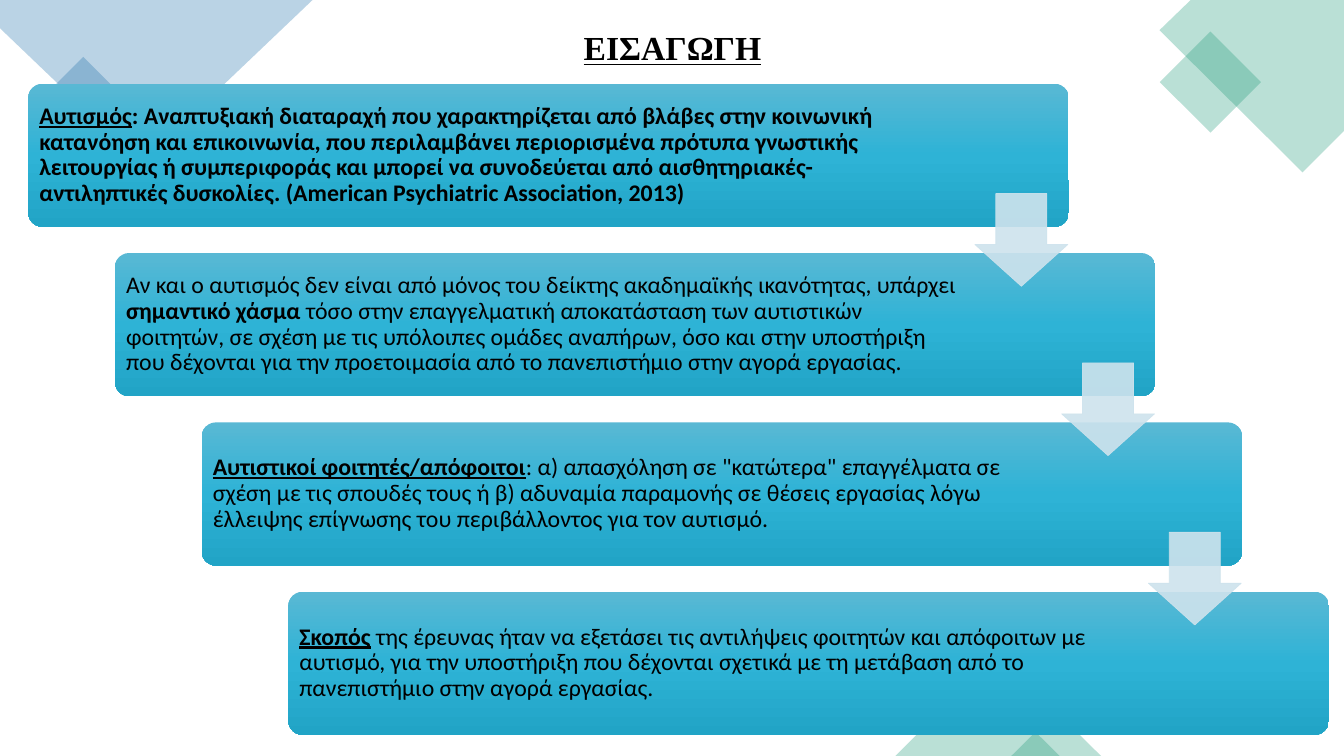
from lxml import etree
from pptx import Presentation
from pptx.dml.color import RGBColor
from pptx.enum import shapes, text
from pptx.oxml import ns, parse_xml
from pptx.util import Inches, Pt

HUES = {
    "blue": "1D6FA9", "green": "1D9A78", "arrow": "CEE3ED", "ink": "000000",
    "top": "59B8D4", "mid": "2EB3D6", "low": "21A4C6",
}
KIND = shapes.MSO_SHAPE
STEP_X, STEP_Y = 0.86, 1.68

STEPS = [
    (8.67, [
        ("Αυτισμός", "bu"),
        (": Αναπτυξιακή διαταραχή που χαρακτηρίζεται από βλάβες στην "
         "κοινωνική κατανόηση και επικοινωνία, που περιλαμβάνει περιορισμένα "
         "πρότυπα γνωστικής λειτουργίας ή συμπεριφοράς και μπορεί να "
         "συνοδεύεται από αισθητηριακές-αντιληπτικές δυσκολίες. "
         "(American Psychiatric Association, 2013)", "b"),
    ]),
    (8.45, [
        ("Αν και ο αυτισμός δεν είναι από μόνος του δείκτης ακαδημαϊκής "
         "ικανότητας, υπάρχει ", ""),
        ("σημαντικό χάσμα", "b"),
        (" τόσο στην επαγγελματική αποκατάσταση των αυτιστικών φοιτητών, "
         "σε σχέση με τις υπόλοιπες ομάδες αναπήρων, όσο και στην υποστήριξη "
         "που δέχονται για την προετοιμασία από το πανεπιστήμιο στην αγορά "
         "εργασίας.", ""),
    ]),
    (8.45, [
        ("Αυτιστικοί φοιτητές/απόφοιτοι", "bu"),
        (": α) απασχόληση σε \"κατώτερα\" επαγγέλματα σε σχέση με τις σπουδές "
         "τους ή β) αδυναμία παραμονής σε θέσεις εργασίας λόγω έλλειψης "
         "επίγνωσης του περιβάλλοντος για τον αυτισμό.", ""),
    ]),
    (8.45, [
        ("Σκοπός", "bu"),
        (" της έρευνας ήταν να εξετάσει τις αντιλήψεις φοιτητών και απόφοιτων "
         "με αυτισμό, για την υποστήριξη που δέχονται σχετικά με τη μετάβαση "
         "από το πανεπιστήμιο στην αγορά εργασίας.", ""),
    ]),
]


def shade(shape, hue):
    shape.shadow.inherit = False
    shape.fill.solid()
    shape.fill.fore_color.rgb = RGBColor.from_string(HUES[hue])
    shape.line.fill.background()


def fade(shape, share):
    for tint in shape._element.spPr.iter(ns.qn("a:srgbClr")):
        etree.SubElement(tint, ns.qn("a:alpha")).set("val", str(share * 1000))


def add_part(slide, kind, box, hue, turn=0):
    shape = slide.shapes.add_shape(kind, *map(Inches, box))
    shape.rotation = turn
    shade(shape, hue)
    return shape


def add_corner(slide, points, hue):
    spots = [(Inches(x), Inches(y)) for x, y in points]
    pen = slide.shapes.build_freeform(*spots[0])
    pen.add_line_segments(spots[1:], close=True)
    shape = pen.convert_to_shape()
    shade(shape, hue)
    fade(shape, 30)


def add_decor(slide):
    add_corner(slide, [(0, 0), (3.1, 0), (1.4, 1.62), (0, 0.28)], "blue")
    add_corner(slide, [(11.81, 0), (13.33, 0), (13.33, 1.3),
                       (12.92, 1.71), (11.5, 0.3)], "green")
    for kind, box, hue, turn in [
        (KIND.RECTANGLE, (0.45, 0.72, 0.75, 0.75), "blue", 45),
        (KIND.RECTANGLE, (11.65, 0.46, 0.71, 0.71), "green", 45),
        (KIND.ISOSCELES_TRIANGLE, (8.88, 6.69, 1.63, 0.81), "green", 0),
        (KIND.ISOSCELES_TRIANGLE, (10.03, 7.06, 0.89, 0.44), "green", 0),
    ]:
        fade(add_part(slide, kind, box, hue, turn), 30)


def set_title(slide):
    title = slide.shapes.title
    title.left, title.top = Inches(0.71), Inches(0.16)
    title.width, title.height = Inches(11.92), Inches(0.67)
    frame = title.text_frame
    frame.text = "ΕΙΣΑΓΩΓΗ"
    frame.auto_size = text.MSO_AUTO_SIZE.NONE
    frame.vertical_anchor = text.MSO_ANCHOR.MIDDLE
    para = frame.paragraphs[0]
    para.alignment = text.PP_ALIGN.CENTER
    para.line_spacing = 0.9
    font = para.font
    font.name, font.size = "Times New Roman", Pt(24)
    font.bold = font.underline = True
    font.color.rgb = RGBColor.from_string(HUES["ink"])


def add_panel(slide, left, top):
    panel = add_part(slide, KIND.ROUNDED_RECTANGLE, (left, top, 10.32, 1.42), "mid")
    panel.adjustments[0] = 0.1
    stops = "".join(
        f'<a:gs pos="{pos}"><a:srgbClr val="{HUES[hue]}"/></a:gs>'
        for pos, hue in [(0, "top"), (50000, "mid"), (100000, "low")])
    blend = parse_xml(
        f'<a:gradFill {ns.nsdecls("a")} rotWithShape="1"><a:gsLst>{stops}</a:gsLst>'
        '<a:lin ang="5400000" scaled="0"/></a:gradFill>')
    props = panel._element.spPr
    props.replace(props.find(ns.qn("a:solidFill")), blend)


def add_words(slide, left, top, width, runs):
    box = slide.shapes.add_textbox(*map(Inches, (left, top, width, 1.34)))
    frame = box.text_frame
    frame.word_wrap = True
    frame.vertical_anchor = text.MSO_ANCHOR.MIDDLE
    frame.margin_left = frame.margin_right = Inches(0.07)
    frame.margin_top = frame.margin_bottom = Inches(0.07)
    para = frame.paragraphs[0]
    para.line_spacing = 0.9
    para.font.name, para.font.size = "Calibri", Pt(17)
    para.font.color.rgb = RGBColor.from_string(HUES["ink"])
    for words, style in runs:
        run = para.add_run()
        run.text = words
        if "b" in style:
            run.font.bold = True
        if "u" in style:
            run.font.underline = True


def add_arrow(slide, left, top):
    arrow = add_part(slide, KIND.DOWN_ARROW, (left, top, 0.92, 0.92), "arrow")
    arrow.adjustments[0] = 0.55
    arrow.adjustments[1] = 0.45
    arrow.line.color.rgb = RGBColor.from_string(HUES["arrow"])
    arrow.line.width = Pt(0.5)
    fade(arrow, 90)


def main():
    deck = Presentation()
    deck.slide_width, deck.slide_height = Inches(13.33), Inches(7.5)
    slide = deck.slides.add_slide(deck.slide_layouts[5])
    add_decor(slide)
    set_title(slide)
    for i, (width, runs) in enumerate(STEPS):
        left, top = 0.28 + i * STEP_X, 0.83 + i * STEP_Y
        add_panel(slide, left, top)
        add_words(slide, left + 0.04, top + 0.04, width, runs)
    for i in range(len(STEPS) - 1):
        add_arrow(slide, 9.67 + i * STEP_X, 1.92 + i * STEP_Y)
    deck.save("out.pptx")


if __name__ == "__main__":
    main()
